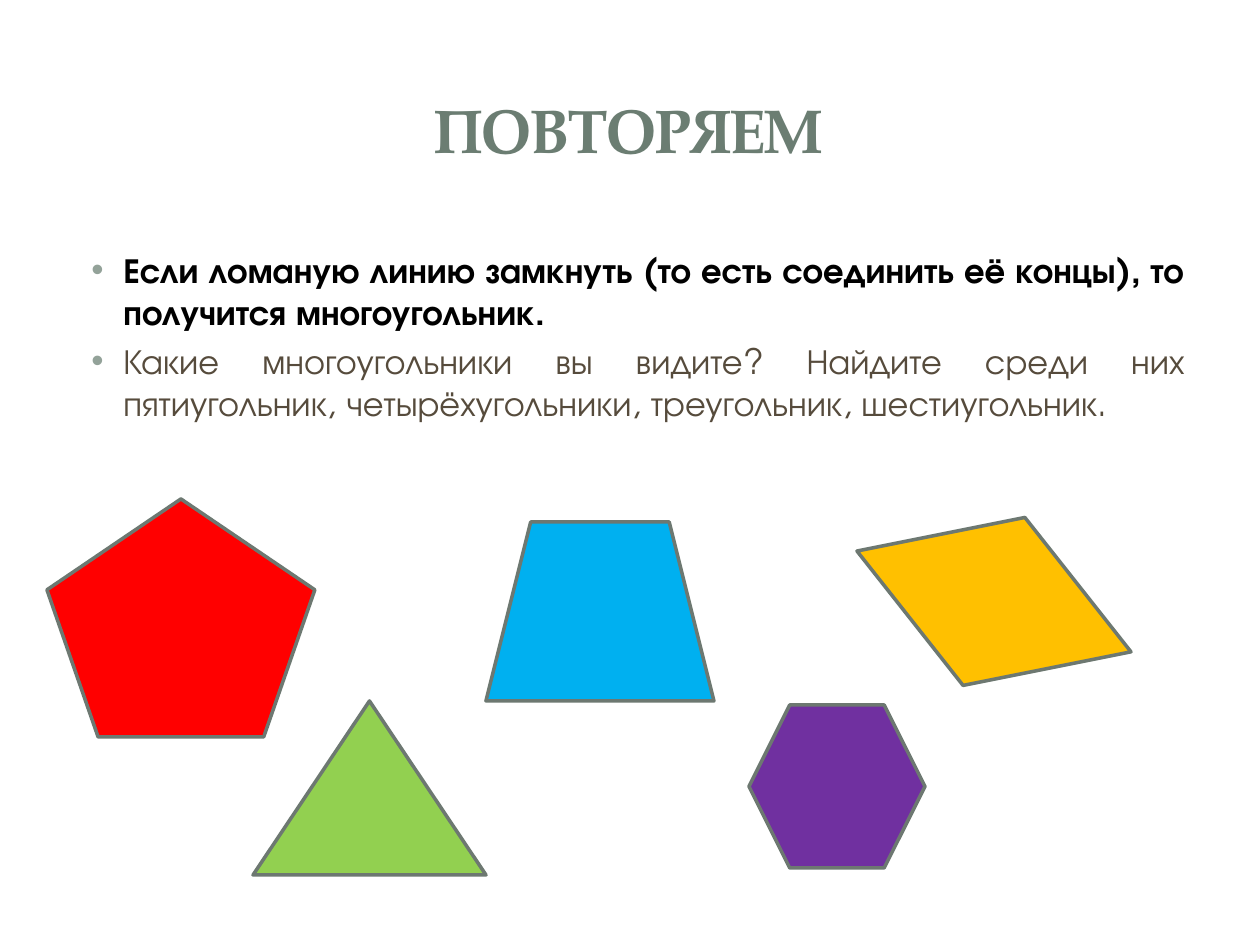
from dataclasses import dataclass

from lxml import etree
from pptx import Presentation
from pptx.dml.color import RGBColor
from pptx.enum.shapes import MSO_SHAPE
from pptx.enum.text import MSO_ANCHOR, PP_ALIGN
from pptx.oxml.ns import qn
from pptx.slide import Slide
from pptx.text.text import TextFrame, _Paragraph
from pptx.util import Emu, Pt

PENTAGON = MSO_SHAPE.REGULAR_PENTAGON
TRAPEZOID = MSO_SHAPE.TRAPEZOID
TRIANGLE = MSO_SHAPE.FLOWCHART_EXTRACT
RHOMBUS = MSO_SHAPE.FLOWCHART_DECISION
HEXAGON = MSO_SHAPE.HEXAGON
MIDDLE, TOP = MSO_ANCHOR.MIDDLE, MSO_ANCHOR.TOP
CENTER, JUSTIFY = PP_ALIGN.CENTER, PP_ALIGN.JUSTIFY

EMU_PER_PX = 914400 // 126


@dataclass(frozen=True)
class Theme:
    """Colours, fonts and type sizes of the slide."""
    heading: str = "6B7D72"
    rule: str = "000000"
    question: str = "564B3C"
    bullet: str = "93A299"
    outline: str = "6D7871"
    heading_font: str = "TeX Gyre Pagella"
    body_font: str = "TeX Gyre Adventor"
    heading_size: int = 35
    body_size: int = 20
    bullet_gap: int = 4
    outline_width: int = 2


@dataclass(frozen=True)
class Box:
    """A rectangle in px."""
    left: int
    top: int
    width: int
    height: int


@dataclass(frozen=True)
class Polygon:
    """A filled figure with an optional turn in degrees."""
    kind: MSO_SHAPE
    box: Box
    fill: str
    turn: float = 0


@dataclass(frozen=True)
class Statement:
    """One bulleted paragraph."""
    text: str
    color: str
    bold: bool


THEME = Theme()
HEADING_BOX = Box(59, 57, 1138, 144)
STATEMENTS_BOX = Box(63, 242, 1134, 602)
HANGING = Box(48, 0, -32, 0)

STATEMENTS = (
    Statement("Если ломаную линию замкнуть (то есть соединить её концы), "
              "то получится многоугольник.", THEME.rule, True),
    Statement("Какие многоугольники вы видите? Найдите среди них пятиугольник, "
              "четырёхугольники, треугольник, шестиугольник.",
              THEME.question, False),
)

POLYGONS = (
    Polygon(PENTAGON, Box(47, 499, 268, 238), "FF0000"),
    Polygon(TRAPEZOID, Box(486, 522, 228, 179), "00B0F0"),
    Polygon(TRIANGLE, Box(253, 701, 233, 174), "92D050"),
    Polygon(RHOMBUS, Box(848, 512, 292, 179), "FFC000", 20.2),
    Polygon(HEXAGON, Box(749, 705, 176, 163), "7030A0"),
)


def px(length: int) -> Emu:
    """Turn px into EMU."""
    return Emu(length * EMU_PER_PX)


def place(box: Box) -> tuple[Emu, Emu, Emu, Emu]:
    """Give the box as left, top, width and height in EMU."""
    return px(box.left), px(box.top), px(box.width), px(box.height)


def add_text_frame(slide: Slide, box: Box, anchor: MSO_ANCHOR) -> TextFrame:
    """Add a wrapping text box and return its frame."""
    frame = slide.shapes.add_textbox(*place(box)).text_frame
    frame.word_wrap = True
    frame.vertical_anchor = anchor
    return frame


def style(paragraph: _Paragraph, font: str, size: int, color: str, bold: bool) -> None:
    """Format every run of the paragraph."""
    for run in paragraph.runs:
        run.font.name = font
        run.font.size = Pt(size)
        run.font.bold = bold
        run.font.color.rgb = RGBColor.from_string(color)


def add_bullet(paragraph: _Paragraph) -> None:
    """Give the paragraph a coloured bullet with a hanging indent."""
    properties = paragraph._p.get_or_add_pPr()
    properties.set("marL", str(px(HANGING.left)))
    properties.set("indent", str(px(HANGING.width)))
    tint = etree.SubElement(properties, qn("a:buClr"))
    etree.SubElement(tint, qn("a:srgbClr"), val=THEME.bullet)
    etree.SubElement(properties, qn("a:buFont"), typeface="Arial")
    etree.SubElement(properties, qn("a:buChar"), char="•")


def add_heading(slide: Slide, text: str) -> None:
    """Add the centred heading."""
    heading = add_text_frame(slide, HEADING_BOX, MIDDLE).paragraphs[0]
    heading.text = text
    heading.alignment = CENTER
    style(heading, THEME.heading_font, THEME.heading_size, THEME.heading, True)


def add_statements(slide: Slide, statements: tuple[Statement, ...]) -> None:
    """Add the bulleted statements in one text box."""
    frame = add_text_frame(slide, STATEMENTS_BOX, TOP)
    frame.text = "\n".join(statement.text for statement in statements)
    for paragraph, statement in zip(frame.paragraphs, statements):
        paragraph.alignment = JUSTIFY
        paragraph.space_before = Pt(THEME.bullet_gap)
        add_bullet(paragraph)
        style(paragraph, THEME.body_font, THEME.body_size,
              statement.color, statement.bold)


def add_polygon(slide: Slide, polygon: Polygon) -> None:
    """Add one outlined figure."""
    figure = slide.shapes.add_shape(polygon.kind, *place(polygon.box))
    figure.rotation = polygon.turn
    figure.shadow.inherit = False
    figure.fill.solid()
    figure.fill.fore_color.rgb = RGBColor.from_string(polygon.fill)
    figure.line.color.rgb = RGBColor.from_string(THEME.outline)
    figure.line.width = Pt(THEME.outline_width)


def main() -> None:
    """Build and save the slide."""
    presentation = Presentation()
    presentation.slide_width, presentation.slide_height = px(1260), px(945)
    slide = presentation.slides.add_slide(presentation.slide_layouts[6])
    add_heading(slide, "ПОВТОРЯЕМ")
    add_statements(slide, STATEMENTS)
    for polygon in POLYGONS:
        add_polygon(slide, polygon)
    presentation.save("out.pptx")


if __name__ == "__main__":
    main()
